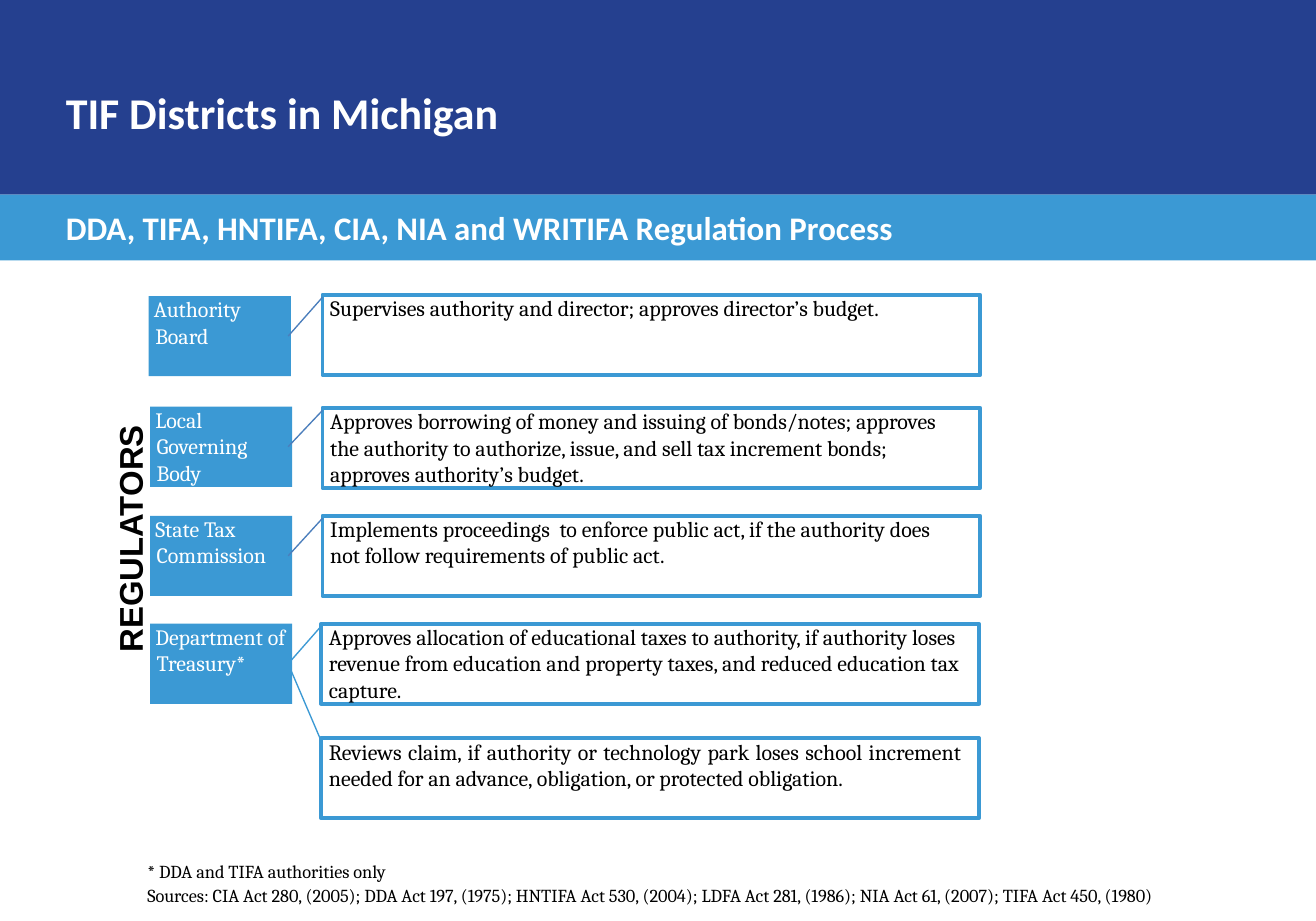
from dataclasses import dataclass

from lxml.etree import SubElement
from pptx import Presentation
from pptx.dml.color import RGBColor
from pptx.enum.shapes import MSO_CONNECTOR, MSO_SHAPE
from pptx.enum.text import MSO_ANCHOR, PP_ALIGN
from pptx.oxml.ns import qn
from pptx.util import Inches, Pt


@dataclass(frozen=True)
class Theme:
    navy: str = "25408F"
    sky: str = "3B99D4"
    steel: str = "4B7EBC"
    white: str = "FFFFFF"
    black: str = "000000"
    heading_font: str = "Calibri"
    body_font: str = "Cambria"
    side_font: str = "Arial"
    title_size: int = 24
    heading_size: int = 18
    body_size: int = 12
    note_size: int = 10


THEME = Theme()
LABEL_WIDTH, DUTY_WIDTH, ROW_HEIGHT = 1.08, 5, 0.61
LINK_START = 2.19

# label, left, top, link colour, then the duties as (left, top, alignment, text)
REGULATORS = [
    ("Authority Board", 1.13, 2.25, THEME.steel, [
        (2.45, 2.24, PP_ALIGN.LEFT,
         "Supervises authority and director; approves director’s budget.")]),
    ("Local Governing Body", 1.14, 3.09, THEME.steel, [
        (2.45, 3.1, PP_ALIGN.LEFT,
         "Approves borrowing of money and issuing of bonds/notes; approves "
         "the authority to authorize, issue, and sell tax increment bonds; "
         "approves authority’s budget.")]),
    ("State Tax Commission", 1.14, 3.92, THEME.steel, [
        (2.45, 3.92, PP_ALIGN.LEFT,
         "Implements proceedings  to enforce public act, if the authority "
         "does not follow requirements of public act.")]),
    ("Department of Treasury*", 1.14, 4.74, THEME.sky, [
        (2.44, 4.74, PP_ALIGN.LEFT,
         "Approves allocation of educational taxes to authority, if authority "
         "loses revenue from education and property taxes, and reduced "
         "education tax capture."),
        (2.44, 5.61, PP_ALIGN.JUSTIFY,
         "Reviews claim, if authority or technology park loses school "
         "increment needed for an advance, obligation, or protected "
         "obligation.")]),
]
NOTES = [
    (6.54, "* DDA and TIFA authorities only"),
    (6.72, "Sources: CIA Act 280, (2005); DDA Act 197, (1975); HNTIFA Act 530, "
           "(2004); LDFA Act 281, (1986); NIA Act 61, (2007); TIFA Act 450, (1980)"),
]


class SlideBuilder:
    def __init__(self, slide, theme):
        self.slide = slide
        self.theme = theme

    def set_text(self, shape, text, font, size, color, bold=False,
                 align=PP_ALIGN.LEFT, left=0.01, right=0):
        frame = shape.text_frame
        frame.word_wrap = True
        frame.vertical_anchor = MSO_ANCHOR.TOP
        frame.margin_left, frame.margin_right = Inches(left), Inches(right)
        frame.margin_top = frame.margin_bottom = 0
        frame.text = text
        paragraph = frame.paragraphs[0]
        paragraph.alignment = align
        paragraph.font.name = font
        paragraph.font.size = Pt(size)
        paragraph.font.bold = bold
        paragraph.font.color.rgb = RGBColor.from_string(color)
        return paragraph

    def title(self, text, left, top, width, height):
        title = self.slide.shapes.title
        title.left, title.top = Inches(left), Inches(top)
        title.width, title.height = Inches(width), Inches(height)
        self.set_text(title, text, self.theme.heading_font, self.theme.title_size,
                      self.theme.white, bold=True)
        # The placeholder exists before the bands, so bring it in front of them.
        self.slide.shapes._spTree.append(title._element)

    def text(self, text, left, top, width, height, font, size, color, **style):
        box = self.slide.shapes.add_textbox(
            Inches(left), Inches(top), Inches(width), Inches(height))
        self.set_text(box, text, font, size, color, **style)
        return box

    def rectangle(self, left, top, width, height, fill=None, line=None):
        rectangle = self.slide.shapes.add_shape(
            MSO_SHAPE.RECTANGLE,
            Inches(left), Inches(top), Inches(width), Inches(height))
        rectangle.shadow.inherit = False
        if fill:
            rectangle.fill.solid()
            rectangle.fill.fore_color.rgb = RGBColor.from_string(fill)
        else:
            rectangle.fill.background()
        if line:
            rectangle.line.color.rgb = RGBColor.from_string(line)
            rectangle.line.width = Pt(2)
        else:
            rectangle.line.fill.background()
        return rectangle

    def label(self, text, left, top):
        label = self.rectangle(left, top, LABEL_WIDTH, ROW_HEIGHT, fill=self.theme.sky)
        paragraph = self.set_text(label, text, self.theme.body_font,
                                  self.theme.body_size, self.theme.white, left=0)
        hanging = paragraph._p.get_or_add_pPr()
        hanging.set("marL", str(Inches(0.05)))
        hanging.set("indent", str(Inches(-0.01)))

    def duty(self, text, left, top, align):
        duty = self.rectangle(left, top, DUTY_WIDTH, ROW_HEIGHT, line=self.theme.sky)
        self.set_text(duty, text, self.theme.body_font, self.theme.body_size,
                      self.theme.black, align=align, left=0.06, right=0.13)

    def link(self, start, end, color):
        link = self.slide.shapes.add_connector(
            MSO_CONNECTOR.STRAIGHT, *(Inches(value) for value in (*start, *end)))
        link.line.color.rgb = RGBColor.from_string(color)
        link.line.width = Pt(0.75)
        SubElement(link._element.spPr, qn("a:effectLst"))


def main():
    presentation = Presentation()
    presentation.slide_width, presentation.slide_height = Inches(10), Inches(7)
    slide = presentation.slides.add_slide(presentation.slide_layouts[5])
    builder = SlideBuilder(slide, THEME)

    builder.rectangle(0, 0, 10, 1.48, fill=THEME.navy)
    builder.rectangle(0, 1.48, 10, 0.5, fill=THEME.sky)
    builder.title("TIF Districts in Michigan", 0.49, 0.65, 9.03, 0.36)
    builder.text("DDA, TIFA, HNTIFA, CIA, NIA and WRITIFA Regulation Process",
                 0.49, 1.58, 9.01, 0.3, THEME.heading_font, THEME.heading_size,
                 THEME.white, bold=True)

    side_heading = builder.text(
        "REGULATORS", -0.87, 3.95, 3.71, 0.3, THEME.side_font,
        THEME.heading_size, THEME.black, bold=True, align=PP_ALIGN.CENTER)
    side_heading.rotation = 270

    for name, left, top, link_color, duties in REGULATORS:
        builder.label(name, left, top)
        for duty_left, duty_top, align, duty in duties:
            builder.duty(duty, duty_left, duty_top, align)
            builder.link((LINK_START, top + ROW_HEIGHT / 2),
                         (duty_left, duty_top + 0.02), link_color)

    for top, note in NOTES:
        builder.text(note, 1.11, top, 8.8, 0.17, THEME.body_font,
                     THEME.note_size, THEME.black)

    presentation.save("out.pptx")


if __name__ == "__main__":
    main()
